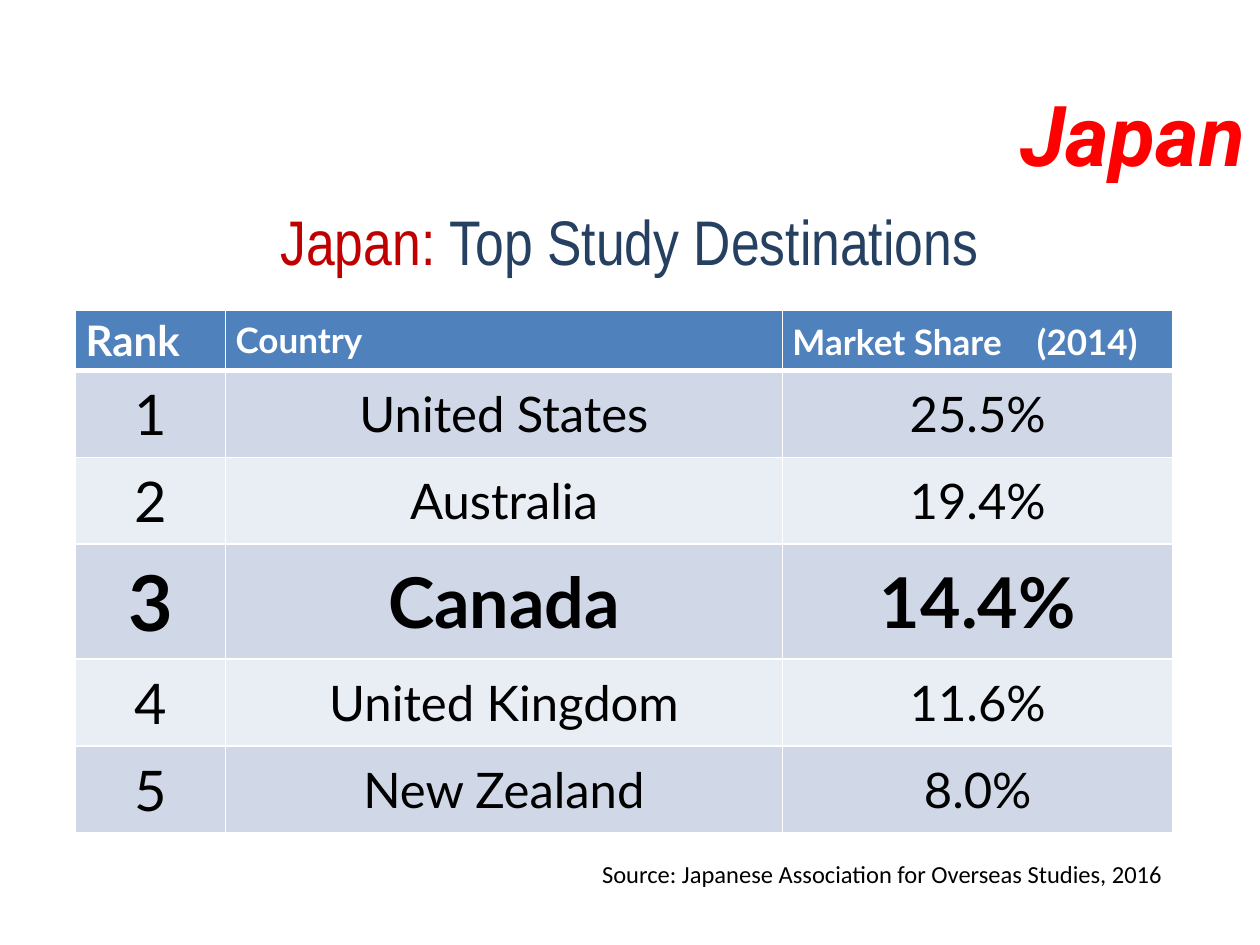
import pptx
import pptx.dml.color
import pptx.enum.text
import pptx.oxml
import pptx.oxml.ns
import pptx.util

Inches = pptx.util.Inches
Pt = pptx.util.Pt
RGBColor = pptx.dml.color.RGBColor
Align = pptx.enum.text.PP_ALIGN
Anchor = pptx.enum.text.MSO_ANCHOR
AutoSize = pptx.enum.text.MSO_AUTO_SIZE

WHITE = RGBColor(0xFF, 0xFF, 0xFF)
BLACK = RGBColor(0x00, 0x00, 0x00)
RED = RGBColor(0xFF, 0x00, 0x00)
DARK_RED = RGBColor(0xC0, 0x00, 0x00)
NAVY = RGBColor(0x25, 0x40, 0x61)
HEADER_BLUE = RGBColor(0x4F, 0x81, 0xBD)
BAND_DARK = RGBColor(0xD0, 0xD8, 0xE8)
BAND_LIGHT = RGBColor(0xE9, 0xED, 0xF4)

HEADINGS = ["Rank", "Country", "Market Share　(2014)"]
DESTINATIONS = [
    ["1", "United States", "25.5%"],
    ["2", "Australia", "19.4%"],
    ["3", "Canada", "14.4%"],
    ["4", "United Kingdom", "11.6%"],
    ["5", "New Zealand", "8.0%"],
]
HIGHLIGHT = "Canada"
COLUMN_WIDTHS = [1.19, 4.42, 3.1]


class SlideBuilder:
    """Holds the slide and the style of its elements."""

    title_font = "Arial Narrow"
    table_font = "Lato"
    border_color = WHITE

    def __init__(self, presentation):
        self.slide = presentation.slides.add_slide(presentation.slide_layouts[5])

    def format_run(self, run, font, size, color, bold=False, italic=False):
        run.font.name = font
        run.font.size = Pt(size)
        run.font.color.rgb = color
        run.font.bold = bold
        run.font.italic = italic

    def title(self, parts, left, top, width, height):
        shape = self.slide.shapes.title
        shape.left, shape.top = Inches(left), Inches(top)
        shape.width, shape.height = Inches(width), Inches(height)
        text_frame = shape.text_frame
        text_frame.auto_size = AutoSize.NONE
        text_frame.vertical_anchor = Anchor.TOP
        paragraph = text_frame.paragraphs[0]
        paragraph.alignment = Align.CENTER
        for text, color in parts:
            run = paragraph.add_run()
            run.text = text
            self.format_run(run, self.title_font, 36, color)

    def text(self, text, left, top, width, height, align=Align.LEFT,
             anchor=Anchor.TOP, **style):
        shape = self.slide.shapes.add_textbox(
            Inches(left), Inches(top), Inches(width), Inches(height))
        text_frame = shape.text_frame
        text_frame.word_wrap = True
        text_frame.vertical_anchor = anchor
        text_frame.text = text
        paragraph = text_frame.paragraphs[0]
        paragraph.alignment = align
        self.format_run(paragraph.runs[0], **style)

    def cell_borders(self, cell, top, bottom):
        properties = cell._tc.get_or_add_tcPr()
        for side, width in (("L", 1), ("R", 1), ("T", top), ("B", bottom)):
            properties.append(pptx.oxml.parse_xml(
                f'<a:ln{side} {pptx.oxml.ns.nsdecls("a")} w="{Pt(width)}">'
                f'<a:solidFill><a:srgbClr val="{self.border_color}"/></a:solidFill>'
                f'</a:ln{side}>'))

    def cell(self, cell, text, fill, align, top, bottom, **style):
        self.cell_borders(cell, top, bottom)
        cell.fill.solid()
        cell.fill.fore_color.rgb = fill
        cell.margin_left = cell.margin_right = Inches(0.08)
        cell.margin_top = cell.margin_bottom = 0
        cell.vertical_anchor = Anchor.MIDDLE
        cell.text_frame.text = text
        paragraph = cell.text_frame.paragraphs[0]
        paragraph.alignment = align
        self.format_run(paragraph.runs[0], self.table_font, **style)

    def table(self, headings, rows, left, top):
        heights = [0.48] + [0.91 if HIGHLIGHT in row else 0.69 for row in rows]
        table = self.slide.shapes.add_table(
            len(heights), len(headings), Inches(left), Inches(top),
            Inches(sum(COLUMN_WIDTHS)), Inches(sum(heights))).table
        for column, width in zip(table.columns, COLUMN_WIDTHS):
            column.width = Inches(width)
        for row, height in zip(table.rows, heights):
            row.height = Inches(height)

        # Header row
        for column, heading in enumerate(headings):
            self.cell(table.cell(0, column), heading, HEADER_BLUE, Align.LEFT, 1, 3,
                      size=24 if column == 0 else 20, color=WHITE, bold=True)

        # Banded body rows, one of them emphasised
        for number, values in enumerate(rows, start=1):
            fill = BAND_DARK if number % 2 else BAND_LIGHT
            bold = HIGHLIGHT in values
            rank_size, value_size = (44, 40) if bold else (32, 28)
            for column, value in enumerate(values):
                self.cell(table.cell(number, column), value, fill, Align.CENTER,
                          3 if number == 1 else 1, 1,
                          size=rank_size if column == 0 else value_size,
                          color=BLACK, bold=bold)


def main():
    presentation = pptx.Presentation()
    presentation.slide_width = Inches(10)
    presentation.slide_height = Inches(7.5)
    builder = SlideBuilder(presentation)

    # Ranking of destinations
    builder.table(HEADINGS, DESTINATIONS, 0.6, 2.46)

    # Title
    builder.title([("Japan: ", DARK_RED), ("Top Study Destinations", NAVY)],
                  0, 1.56, 9.99, 1.25)

    # Source line
    builder.text("Source: Japanese Association for Overseas Studies, 2016",
                 4.68, 6.77, 5.31, 0.34, font="Calibri", size=14, color=BLACK)

    # Country label in the corner
    builder.text("Japan", 7.99, 0.74, 2, 0.63, Align.CENTER, Anchor.MIDDLE,
                 font="Roboto", size=48, color=RED, bold=True, italic=True)

    presentation.save("out.pptx")


if __name__ == "__main__":
    main()
